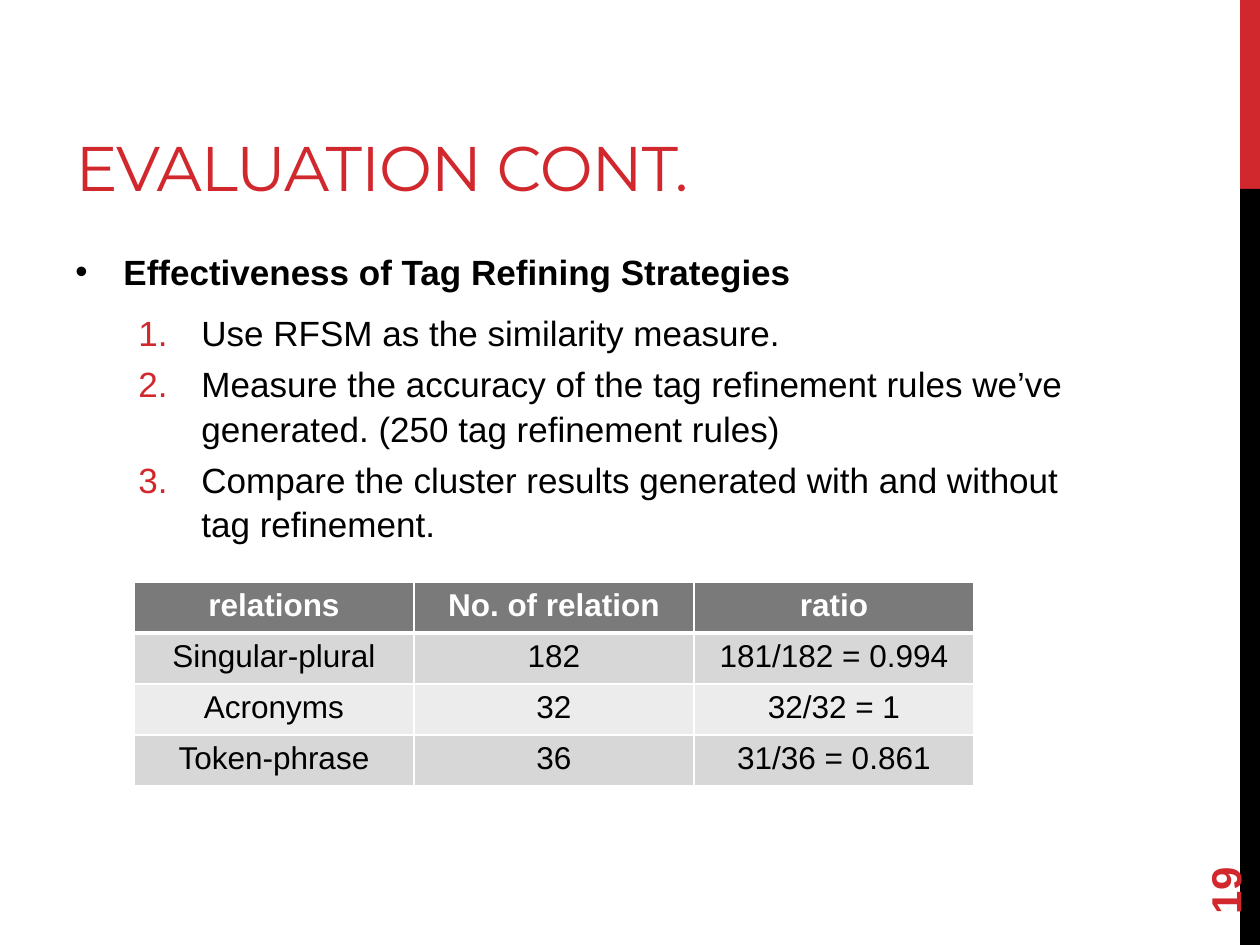
from lxml import etree
from pptx import Presentation
from pptx.dml.color import RGBColor
from pptx.enum.shapes import MSO_SHAPE
from pptx.enum.text import MSO_ANCHOR, PP_ALIGN
from pptx.oxml.ns import qn
from pptx.util import Pt

RECT = MSO_SHAPE.RECTANGLE
BOTTOM, MIDDLE = MSO_ANCHOR.BOTTOM, MSO_ANCHOR.MIDDLE
LEFT, CENTER = PP_ALIGN.LEFT, PP_ALIGN.CENTER
COLORS = {
    "red": "D1282E", "black": "000000", "white": "FFFFFF",
    "head": "7A7A7A", "odd": "D7D7D7", "even": "ECECEC",
}
STEPS = [
    "Use RFSM as the similarity measure.",
    "Measure the accuracy of the tag refinement rules we’ve generated. "
    "(250 tag refinement rules)",
    "Compare the cluster results generated with and without tag refinement.",
]
ROWS = [
    ["relations", "No. of relation", "ratio"],
    ["Singular-plural", "182", "181/182 = 0.994"],
    ["Acronyms", "32", "32/32 = 1"],
    ["Token-phrase", "36", "31/36 = 0.861"],
]


def px(n):
    return round(n * 914400 / 126)


def rgb(name):
    return RGBColor.from_string(COLORS[name])


def write(para, text, size=20, font="Arial", color="black", bold=False,
          align=LEFT, track=None):
    para.alignment = align
    run = para.add_run()
    run.text = text
    run.font.size = Pt(size)
    run.font.name = font
    run.font.bold = bold
    run.font.color.rgb = rgb(color)
    if track is not None:
        run.font._element.set("spc", str(track))


def add_bar(slide, top, height, color):
    bar = slide.shapes.add_shape(RECT, px(1240), px(top), px(20), px(height))
    bar.shadow.inherit = False
    bar.fill.solid()
    bar.fill.fore_color.rgb = rgb(color)
    bar.line.fill.background()


def add_title(slide, text):
    title = slide.shapes.title
    title.left, title.top = px(63), px(21)
    title.width, title.height = px(798), px(189)
    frame = title.text_frame
    frame.vertical_anchor = BOTTOM
    write(frame.paragraphs[0], text, size=36, font="Montserrat",
          color="red", track=-60)


def add_box(slide, left, top, width, height):
    box = slide.shapes.add_textbox(px(left), px(top), px(width), px(height))
    box.text_frame.word_wrap = True
    return box


def set_list(para, margin, hang, tag, color=None, **attrs):
    """Give a paragraph its hanging indent and its bullet or number."""
    props = para._p.get_or_add_pPr()
    props.set("marL", str(px(margin)))
    props.set("indent", str(-px(hang)))
    if color:
        fill = etree.SubElement(props, qn("a:buClr"))
        etree.SubElement(fill, qn("a:srgbClr"), val=COLORS[color])
    etree.SubElement(props, qn("a:buFont"), typeface="Arial")
    etree.SubElement(props, qn(tag), **attrs)


def add_body(slide, head, steps):
    frame = add_box(slide, 63, 242, 1050, 310).text_frame
    first = frame.paragraphs[0]
    write(first, head, bold=True)
    paras = [first]
    for step in steps:
        para = frame.add_paragraph()
        para.level = 1
        write(para, step)
        paras.append(para)
    for para in paras:
        para.line_spacing = 1.05
        para.space_before = Pt(4)
    first.space_after = Pt(6)
    set_list(first, 48, 48, "a:buChar", char="•")
    for para in paras[1:]:
        set_list(para, 126, 63, "a:buAutoNum", color="red",
                 type="arabicPeriod")


def set_edge(cell, side, width):
    props = cell._tc.get_or_add_tcPr()
    line = etree.SubElement(props, qn(f"a:ln{side}"), w=str(Pt(width)))
    fill = etree.SubElement(line, qn("a:solidFill"))
    etree.SubElement(fill, qn("a:srgbClr"), val=COLORS["white"])


def add_grid(slide, rows):
    count, wide = len(rows), len(rows[0])
    table = slide.shapes.add_table(count, wide, px(134), px(582),
                                   px(280 * wide), px(51 * count)).table
    for r, row in enumerate(rows):
        head = r == 0
        shade = "head" if head else "odd" if r % 2 else "even"
        for c, text in enumerate(row):
            cell = table.cell(r, c)
            for side in "LRTB":
                thick = (head and side == "B") or (r == 1 and side == "T")
                set_edge(cell, side, 3 if thick else 1)
            cell.fill.solid()
            cell.fill.fore_color.rgb = rgb(shade)
            write(cell.text_frame.paragraphs[0], text, size=18, bold=head,
                  color="white" if head else "black", align=CENTER)


def add_number(slide, text):
    box = add_box(slide, 1134, 811, 181, 50)
    box.rotation = 270
    box.text_frame.vertical_anchor = MIDDLE
    write(box.text_frame.paragraphs[0], text, size=24, color="red", bold=True)


def main():
    deck = Presentation()
    deck.slide_width, deck.slide_height = px(1260), px(945)
    slide = deck.slides.add_slide(deck.slide_layouts[5])
    add_bar(slide, 0, 189, "red")
    add_bar(slide, 189, 756, "black")
    add_title(slide, "EVALUATION CONT.")
    add_body(slide, "Effectiveness of Tag Refining Strategies", STEPS)
    add_number(slide, "19")
    add_grid(slide, ROWS)
    deck.save("out.pptx")


if __name__ == "__main__":
    main()
